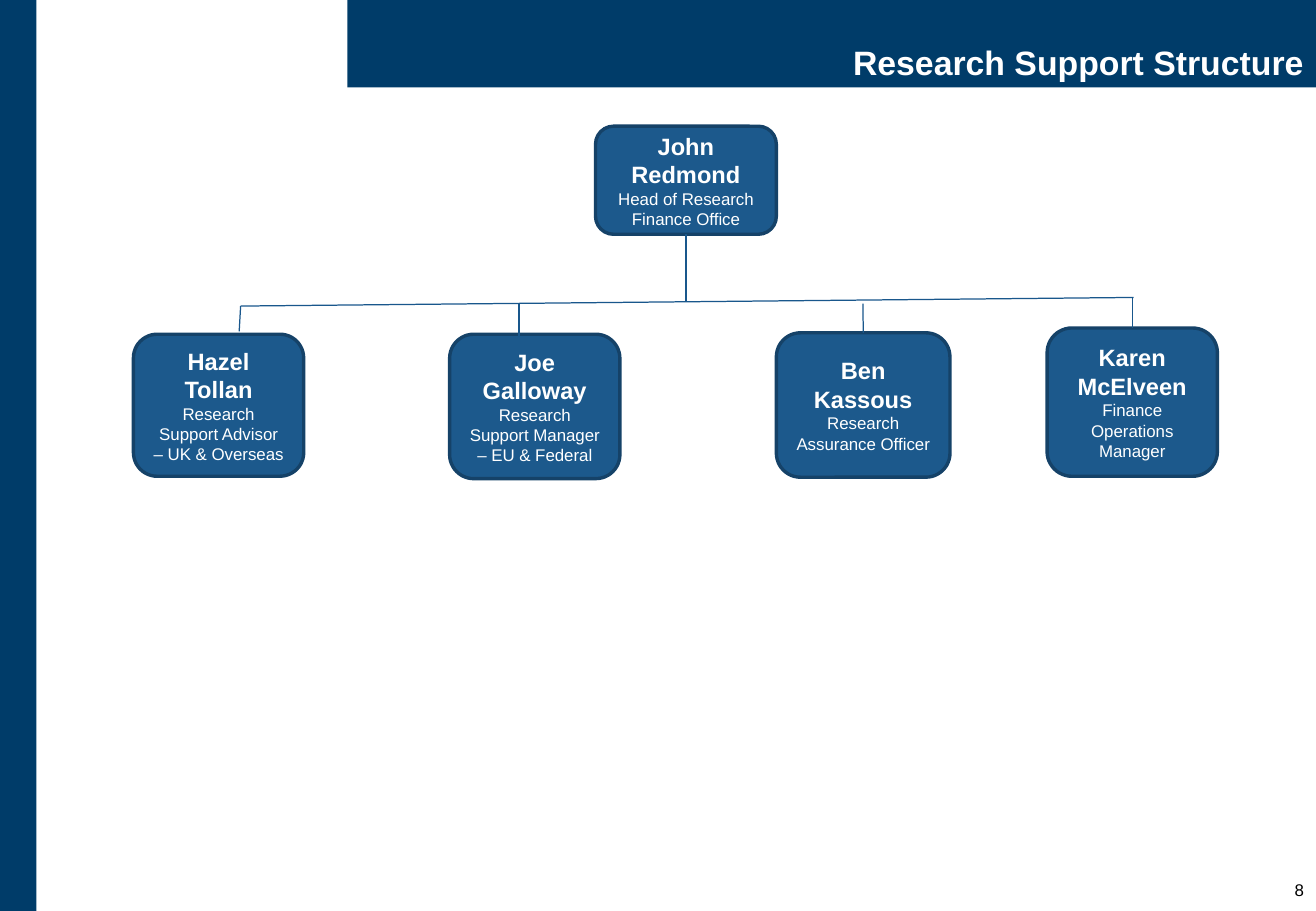
from dataclasses import dataclass

from lxml import etree
from pptx import Presentation
from pptx import util as u
from pptx.dml import color
from pptx.enum import shapes, text
from pptx.oxml import ns


@dataclass(frozen=True)
class Theme:
    font: str = "Arial"
    navy: str = "003C69"
    box_fill: str = "1C598C"
    box_line: str = "154268"
    link: str = "19578C"
    white: str = "FFFFFF"
    black: str = "000000"
    title_size: int = 20
    name_size: int = 14
    small_size: int = 10


theme = Theme()
rgb = color.RGBColor.from_string


def write(para, words, size=theme.small_size, ink=theme.white, bold=False, align=text.PP_ALIGN.CENTER):
    para.alignment = align
    span = para.add_run()
    span.text = words
    span.font.name = theme.font
    span.font.size = u.Pt(size)
    span.font.bold = bold
    span.font.color.rgb = rgb(ink)


def connect(page, x1, y1, x2, y2):
    line = page.shapes.add_connector(
        shapes.MSO_CONNECTOR.STRAIGHT, u.Cm(x1), u.Cm(y1), u.Cm(x2), u.Cm(y2))
    line.line.color.rgb = rgb(theme.link)
    line.line.width = u.Pt(0.75)
    etree.SubElement(line._element.spPr, ns.qn("a:effectLst"))
    return line


deck = Presentation()
deck.slide_width = u.Cm(27.51)
deck.slide_height = u.Cm(19.05)
page = deck.slides.add_slide(deck.slide_layouts[5])

side_bar = page.shapes.add_shape(
    shapes.MSO_SHAPE.RECTANGLE, 0, 0, u.Cm(0.76), deck.slide_height)
side_bar.shadow.inherit = False
side_bar.fill.solid()
side_bar.fill.fore_color.rgb = rgb(theme.navy)
side_bar.line.fill.background()

title = page.shapes.title
title.left, title.top = u.Cm(7.26), 0
title.width, title.height = u.Cm(20.25), u.Cm(1.83)
title.fill.solid()
title.fill.fore_color.rgb = rgb(theme.navy)
frame = title.text_frame
frame.auto_size = text.MSO_AUTO_SIZE.NONE
frame.vertical_anchor = text.MSO_ANCHOR.BOTTOM
frame.margin_left, frame.margin_right = u.Cm(0.2), u.Cm(0.25)
frame.margin_top = frame.margin_bottom = u.Cm(0.1)
frame.paragraphs[0].line_spacing = 0.9
write(frame.paragraphs[0], "Research Support Structure", size=theme.title_size,
      bold=True, align=text.PP_ALIGN.RIGHT)

number = page.shapes.add_textbox(u.Cm(25.3), u.Cm(18.26), u.Cm(2.21), u.Cm(0.79))
number.text_frame.word_wrap = True
write(number.text_frame.paragraphs[0], "8", ink=theme.black, align=text.PP_ALIGN.RIGHT)

people = [
    ("John Redmond", "Head of Research Finance Office", 12.45, 2.64, 3.78, 2.26),
    ("Hazel Tollan", "Research Support Advisor – UK & Overseas", 2.79, 6.99, 3.56, 2.97),
    ("Joe Galloway", "Research Support Manager – EU & Federal", 9.4, 6.99, 3.56, 3.02),
    ("Ben Kassous", "Research Assurance Officer", 16.23, 6.96, 3.63, 3.02),
    ("Karen McElveen", "Finance Operations Manager", 21.89, 6.86, 3.56, 3.1),
]
boxes = {}
for name, role, left, top, width, height in people:
    box = page.shapes.add_shape(
        shapes.MSO_SHAPE.ROUNDED_RECTANGLE, u.Cm(left), u.Cm(top), u.Cm(width), u.Cm(height))
    box.shadow.inherit = False
    box.fill.solid()
    box.fill.fore_color.rgb = rgb(theme.box_fill)
    box.line.color.rgb = rgb(theme.box_line)
    box.line.width = u.Pt(2)
    frame = box.text_frame
    frame.word_wrap = True
    frame.vertical_anchor = text.MSO_ANCHOR.MIDDLE
    write(frame.paragraphs[0], name, size=theme.name_size, bold=True)
    write(frame.add_paragraph(), role)
    boxes[name] = box

connect(page, 5.03, 6.4, 23.7, 6.22)
connect(page, 5.03, 6.4, 5.0, 6.93)
connect(page, 10.85, 6.35, 10.85, 7.04)

joined = [
    ("John Redmond", 2, 14.34, 4.9, 6.3),
    ("Ben Kassous", 0, 18.04, 6.96, 6.35),
    ("Karen McElveen", 0, 23.67, 6.86, 6.22),
]
for name, side, x, box_y, rail_y in joined:
    connect(page, x, box_y, x, rail_y).begin_connect(boxes[name], side)

deck.save("out.pptx")
